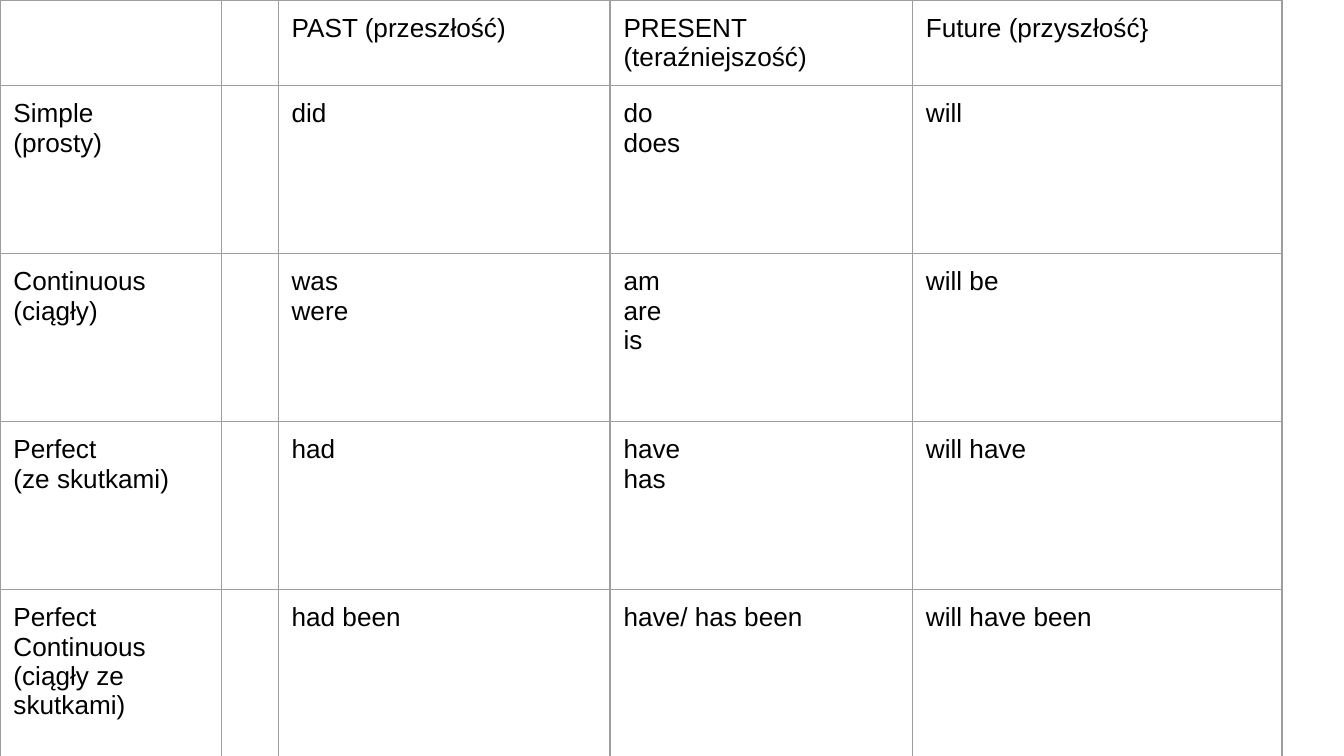
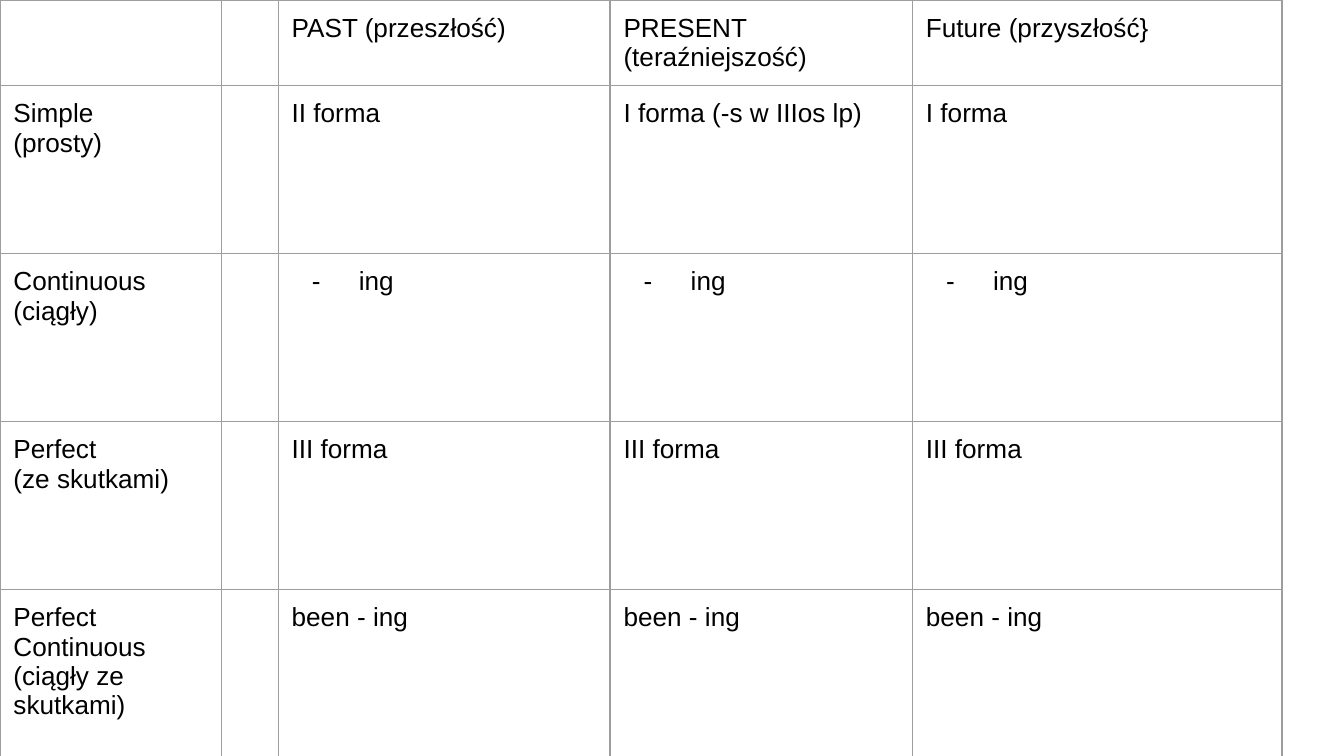
from lxml import etree
from pptx import Presentation
from pptx.dml.color import RGBColor
from pptx.enum.text import MSO_ANCHOR
from pptx.oxml.ns import qn
from pptx.util import Inches, Pt

TOP = MSO_ANCHOR.TOP
BLACK = "000000"
GREY = "9E9E9E"
BULLET = "- "
PAD = Inches(0.1)
WIDE = Inches(10)
PAGE = {"slide_width": WIDE, "slide_height": WIDE * 9 // 16}
COLS = [1.65, 0.42, 2.47, 2.25, 2.75]
ROWS = [0.62] + [1.25] * 4
PLAIN = {"first_row": False, "horz_banding": False}
CELL = {
    "margin_left": PAD,
    "margin_right": PAD,
    "margin_top": PAD,
    "margin_bottom": PAD,
    "vertical_anchor": TOP,
}
FONT = {"name": "Arial", "size": Pt(14), "bold": False}

TENSES = ["PAST (przeszłość)", "PRESENT (teraźniejszość)", "Future (przyszłość}"]
ASPECTS = [
    "Simple\n(prosty)",
    "Continuous\n(ciągły)",
    "Perfect\n(ze skutkami)",
    "Perfect Continuous\n(ciągły ze skutkami)",
]
VERBS = [
    ["did", "do\ndoes", "will"],
    ["was\nwere", "am\nare\nis", "will be"],
    ["had", "have\nhas", "will have"],
    ["had been", "have/ has been", "will have been"],
]
FORMS = [
    ["II forma", "I forma (-s w IIIos lp)", "I forma"],
    ["- ing"] * 3,
    ["III forma"] * 3,
    ["been - ing"] * 3,
]


def color(code):
    return RGBColor.from_string(code)


def style(item, values):
    for name, value in values.items():
        setattr(item, name, value)


def node(parent, tag, **attrs):
    return etree.SubElement(parent, qn(tag), attrs)


def add_edges(cell):
    props = cell._tc.get_or_add_tcPr()
    for side in "LRTB":
        line = node(props, f"a:ln{side}", w=str(Pt(0.75)))
        node(node(line, "a:solidFill"), "a:srgbClr", val=GREY)


def add_bullet(para):
    props = para._p.get_or_add_pPr()
    props.set("marL", str(Inches(0.5)))
    props.set("indent", str(Inches(-0.35)))
    for old in list(props):
        props.remove(old)
    node(node(props, "a:buClr"), "a:srgbClr", val=BLACK)
    node(props, "a:buFont", typeface=FONT["name"])
    node(props, "a:buChar", char=BULLET.strip())


def fill_cell(cell, text):
    style(cell, CELL)
    add_edges(cell)
    cell.fill.background()
    cell.text = text.removeprefix(BULLET)
    for para in cell.text_frame.paragraphs:
        for run in para.runs:
            style(run.font, FONT)
            run.font.color.rgb = color(BLACK)
        if text.startswith(BULLET):
            add_bullet(para)


def add_grid(slide, body):
    rows = [["", "", *TENSES]]
    rows += [[label, "", *cells] for label, cells in zip(ASPECTS, body)]
    size = Inches(sum(COLS)), Inches(sum(ROWS))
    table = slide.shapes.add_table(len(ROWS), len(COLS), 0, 0, *size).table
    style(table, PLAIN)
    for col, width in zip(table.columns, COLS):
        col.width = Inches(width)
    for row, height, texts in zip(table.rows, ROWS, rows):
        row.height = Inches(height)
        for cell, text in zip(row.cells, texts):
            fill_cell(cell, text)


def main():
    deck = Presentation()
    style(deck, PAGE)
    for body in (VERBS, FORMS):
        add_grid(deck.slides.add_slide(deck.slide_layouts[6]), body)
    deck.save("out.pptx")


if __name__ == "__main__":
    main()
